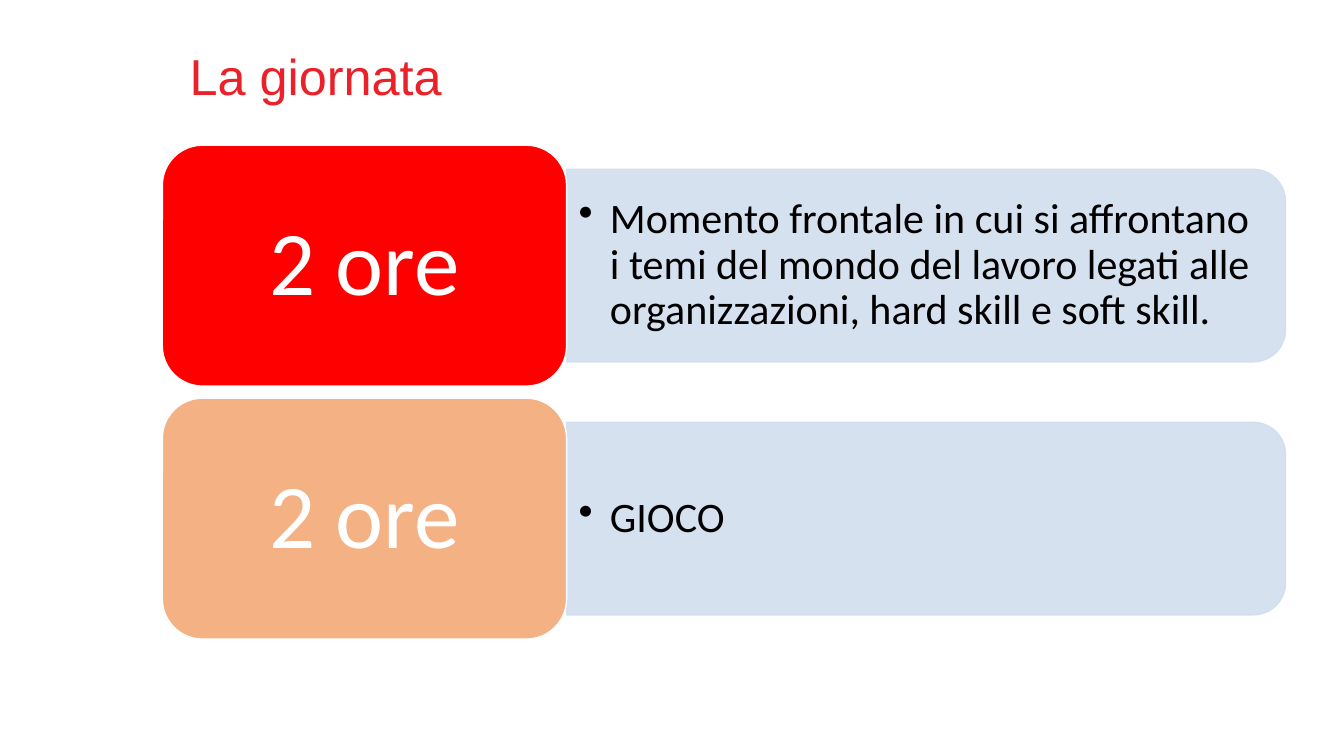
from lxml import etree
from pptx import Presentation
from pptx.dml.color import RGBColor
from pptx.enum.shapes import MSO_SHAPE
from pptx.enum.text import MSO_ANCHOR, PP_ALIGN
from pptx.oxml.ns import qn
from pptx.util import Inches, Pt

ROUNDED = MSO_SHAPE.ROUNDED_RECTANGLE
ROUNDED_TOP = MSO_SHAPE.ROUND_2_SAME_RECTANGLE
TOP = MSO_ANCHOR.TOP
MIDDLE = MSO_ANCHOR.MIDDLE
LEFT = PP_ALIGN.LEFT
CENTER = PP_ALIGN.CENTER

COLORS = {
    "title": "EA2129",
    "lecture": "FF0000",
    "game": "F4B183",
    "panel": "D2DEEF",
    "white": "FFFFFF",
    "black": "000000",
}

SESSIONS = [
    ("2 ore", "lecture",
     "Momento frontale in cui si affrontano i temi del mondo del lavoro "
     "legati alle organizzazioni, hard skill e soft skill."),
    ("2 ore", "game", "GIOCO"),
]
ROW_HEIGHT = 2.39
ROW_STEP = 2.51
DURATION_WIDTH = 4.01
PANEL_HEIGHT = 1.91


def color(name):
    return RGBColor.from_string(COLORS[name])


def style_text(paragraph, font_name, size, color_name, align):
    paragraph.alignment = align
    paragraph.line_spacing = 0.9
    paragraph.font.name = font_name
    paragraph.font.size = Pt(size)
    paragraph.font.color.rgb = color(color_name)


def set_frame(frame, anchor, side, edge):
    frame.word_wrap = True
    frame.vertical_anchor = anchor
    frame.margin_left = frame.margin_right = Inches(side)
    frame.margin_top = frame.margin_bottom = Inches(edge)


def add_block(slide, preset, box, fill, line):
    block = slide.shapes.add_shape(preset, *map(Inches, box))
    block.shadow.inherit = False
    block.fill.solid()
    block.fill.fore_color.rgb = color(fill)
    block.line.color.rgb = color(line)
    block.line.width = Pt(1)
    return block


def add_bullet(paragraph):
    properties = paragraph._p.get_or_add_pPr()
    properties.set("marL", str(Inches(0.31)))
    properties.set("indent", str(-Inches(0.31)))
    etree.SubElement(properties, qn("a:buChar")).set("char", "•")


def add_title(slide, left, top, width, height):
    title = slide.shapes.title
    title.left, title.top = Inches(left), Inches(top)
    title.width, title.height = Inches(width), Inches(height)
    set_frame(title.text_frame, TOP, 0.1, 0.08)
    heading = title.text_frame.paragraphs[0]
    heading.text = "La giornata"
    style_text(heading, "Arial", 36, "title", LEFT)


def add_activity(slide, left, top, width, height, activity):
    turned_box = (left + (width - height) / 2, top + (height - width) / 2,
                  height, width)
    panel = add_block(slide, ROUNDED_TOP, turned_box, "panel", "panel")
    panel.rotation = 90
    for tint in panel._element.spPr.iter(qn("a:srgbClr")):
        etree.SubElement(tint, qn("a:alpha")).set("val", "90000")

    note = slide.shapes.add_textbox(
        *map(Inches, (left, top + 0.09, width - 0.1, height - 0.18)))
    set_frame(note.text_frame, MIDDLE, 0.12, 0.06)
    item = note.text_frame.paragraphs[0]
    item.text = activity
    add_bullet(item)
    style_text(item, "Calibri", 30, "black", LEFT)


def add_session(slide, left, top, width, height, session):
    duration, fill, activity = session
    add_activity(slide, left + DURATION_WIDTH,
                 top + (height - PANEL_HEIGHT) / 2,
                 width - DURATION_WIDTH, PANEL_HEIGHT, activity)
    badge = add_block(slide, ROUNDED, (left, top, DURATION_WIDTH, height),
                      fill, "white")
    set_frame(badge.text_frame, MIDDLE, 0.27, 0.14)
    label = badge.text_frame.paragraphs[0]
    label.text = duration
    style_text(label, "Calibri", 65, "white", CENTER)


def main():
    deck = Presentation()
    deck.slide_width, deck.slide_height = Inches(13.33), Inches(7.5)
    slide = deck.slides.add_slide(deck.slide_layouts[5])
    add_title(slide, 1.78, 0.44, 11.3, 0.82)
    for row, session in enumerate(SESSIONS):
        add_session(slide, 1.61, 1.44 + row * ROW_STEP, 11.14, ROW_HEIGHT,
                    session)
    deck.save("out.pptx")


if __name__ == "__main__":
    main()
